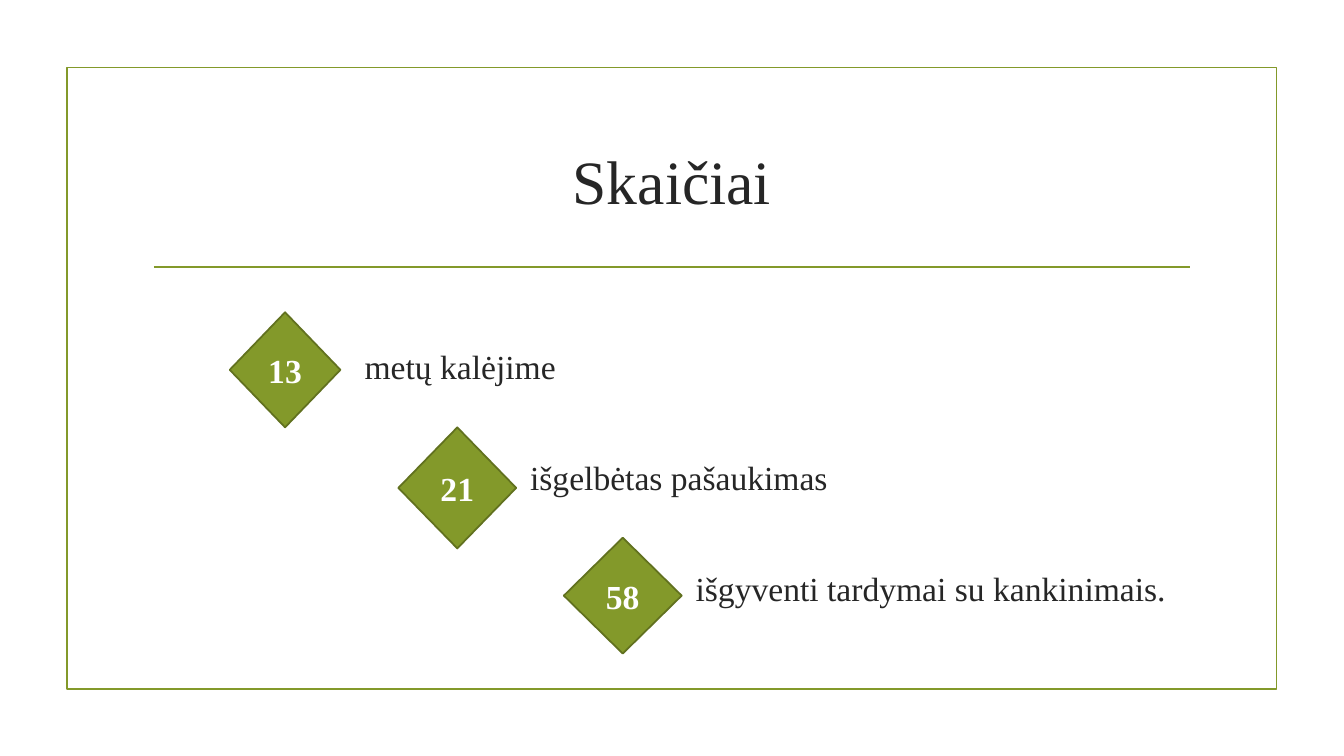
from pptx import Presentation
from pptx.dml.color import RGBColor
from pptx.enum.shapes import MSO_CONNECTOR, MSO_SHAPE
from pptx.enum.text import MSO_ANCHOR, PP_ALIGN
from pptx.oxml.ns import qn
from pptx.util import Cm, Pt
from lxml import etree

RECTANGLE, DIAMOND = MSO_SHAPE.RECTANGLE, MSO_SHAPE.DIAMOND
STRAIGHT = MSO_CONNECTOR.STRAIGHT
MIDDLE = MSO_ANCHOR.MIDDLE
LEFT, CENTER = PP_ALIGN.LEFT, PP_ALIGN.CENTER

GREEN = RGBColor(0x83, 0x99, 0x2A)
DARK_GREEN = RGBColor(0x61, 0x71, 0x1F)
DARK_GRAY = RGBColor(0x26, 0x26, 0x26)
WHITE = RGBColor(0xFF, 0xFF, 0xFF)

FONT = "Times New Roman"
LINE_WIDTH = Pt(1.25)
LABEL_HEIGHT = Cm(1.2)

FACTS = [
    ("13", "metų kalėjime", (0, 0, 2.79, 2.9)),
    ("21", "išgelbėtas pašaukimas", (4.25, 2.9, 2.97, 3.05)),
    ("58", "išgyventi tardymai su kankinimais.", (8.42, 5.68, 2.97, 2.92)),
]


def write_text(shape, text, size, color, alignment, bold=False, wrap=True):
    text_frame = shape.text_frame
    text_frame.text = text
    text_frame.word_wrap = wrap
    text_frame.vertical_anchor = MIDDLE
    text_frame.margin_left = text_frame.margin_right = 0
    text_frame.margin_top = text_frame.margin_bottom = 0
    paragraph = text_frame.paragraphs[0]
    paragraph.alignment = alignment
    font = paragraph.runs[0].font
    font.name = FONT
    font.size = Pt(size)
    font.bold = bold
    font.color.rgb = color


def add_outlined_shape(slide, kind, box, line_color):
    shape = slide.shapes.add_shape(kind, *box)
    shape.shadow.inherit = False
    shape.fill.background()
    shape.line.color.rgb = line_color
    shape.line.width = LINE_WIDTH
    return shape


def add_frame(slide, left, top, width, height):
    add_outlined_shape(slide, RECTANGLE, (left, top, width, height), GREEN)


def add_title(slide, left, top, width, height):
    title = slide.shapes.add_textbox(left, top, width, height)
    write_text(title, "Skaičiai", 44, DARK_GRAY, CENTER)
    rule_left = left + Cm(0.28)
    rule_right = left + width - Cm(0.28)
    rule_top = top + height + Cm(0.38)
    rule = slide.shapes.add_connector(
        STRAIGHT, rule_left, rule_top, rule_right, rule_top)
    rule.line.color.rgb = GREEN
    rule.line.width = LINE_WIDTH
    etree.SubElement(rule._element.spPr, qn("a:effectLst"))


def add_facts(slide, left, top, width, height):
    for index, (number, label_text, diamond_box) in enumerate(FACTS):
        x, y, diamond_width, diamond_height = map(Cm, diamond_box)
        box = (left + x, top + y, diamond_width, diamond_height)
        diamond = add_outlined_shape(slide, DIAMOND, box, DARK_GREEN)
        diamond.fill.solid()
        diamond.fill.fore_color.rgb = GREEN
        write_text(diamond, number, 24, WHITE, CENTER, bold=True, wrap=False)

        label_x = Cm(3.4 + 4.17 * index)
        label_y = Cm(0.75 + 2.8 * index)
        label = slide.shapes.add_textbox(
            left + label_x, top + label_y, width - label_x, LABEL_HEIGHT)
        write_text(label, label_text, 24, DARK_GRAY, LEFT)


def main():
    presentation = Presentation()
    presentation.slide_width = Cm(33.87)
    presentation.slide_height = Cm(19.05)
    slide = presentation.slides.add_slide(presentation.slide_layouts[6])
    add_frame(slide, Cm(1.69), Cm(1.7), Cm(30.48), Cm(15.67))
    add_title(slide, Cm(3.6), Cm(2.72), Cm(26.67), Cm(3.63))
    add_facts(slide, Cm(5.79), Cm(7.87), Cm(24.48), Cm(8.6))
    presentation.save("out.pptx")


if __name__ == "__main__":
    main()
